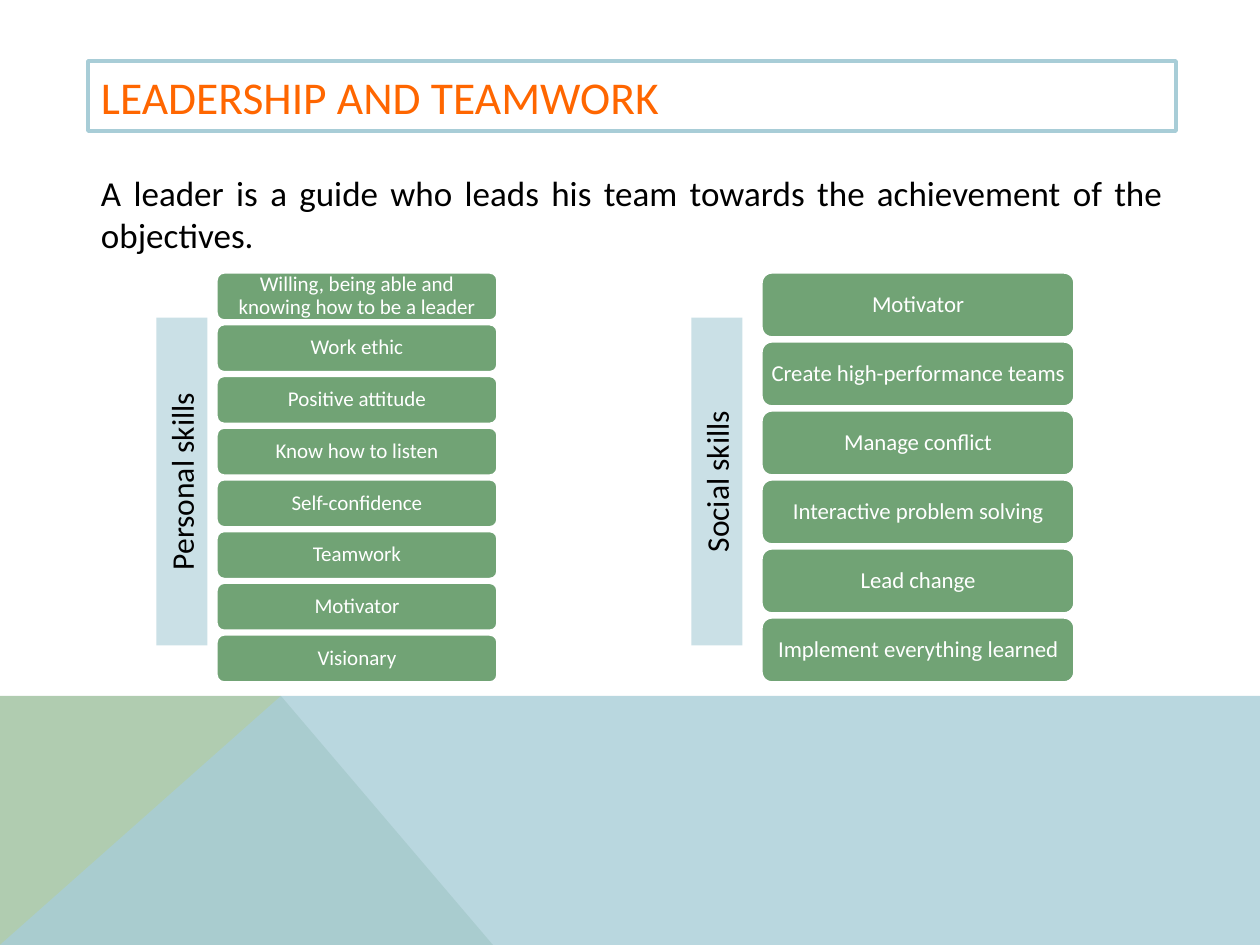
from dataclasses import dataclass

from lxml import etree
from pptx import Presentation
from pptx import util as u
from pptx.dml.color import RGBColor
from pptx.enum import shapes, text
from pptx.oxml.ns import qn

SCALE = 914400 / 126  # EMU in one px


@dataclass(frozen=True)
class Theme:
    font: str = "Calibri"
    white: str = "FFFFFF"
    black: str = "000000"
    orange: str = "FF6600"
    green: str = "71A375"
    pale_green: str = "B0CCB0"
    blue: str = "A8CDD7"
    pale_blue: str = "CAE0E6"
    title_size: int = 26
    intro_size: int = 20
    label_size: int = 18
    personal_size: int = 12
    social_size: int = 13
    line_width: int = 2


THEME = Theme()
PERSONAL_SKILLS = [
    "Willing, being able and knowing how to be a leader", "Work ethic",
    "Positive attitude", "Know how to listen", "Self-confidence",
    "Teamwork", "Motivator", "Visionary",
]
SOCIAL_SKILLS = [
    "Motivator", "Create high-performance teams", "Manage conflict",
    "Interactive problem solving", "Lead change", "Implement everything learned",
]
LIST_TOP, LIST_BOTTOM = 272, 683


def px(length):
    return u.Emu(round(length * SCALE))


def paint(shape, fill, line=None):
    shape.shadow.inherit = False
    shape.fill.solid()
    shape.fill.fore_color.rgb = RGBColor.from_string(fill)
    if line:
        shape.line.color.rgb = RGBColor.from_string(line)
        shape.line.width = u.Pt(THEME.line_width)
    else:
        shape.line.fill.background()


def write(shape, words, *, size, color, align=text.PP_ALIGN.LEFT,
          anchor=text.MSO_ANCHOR.TOP, inset=(13, 6), spacing=None):
    """Fill a shape with one paragraph; inset is (sides, top and bottom) in px."""
    frame = shape.text_frame
    frame.word_wrap = True
    frame.vertical_anchor = anchor
    frame.margin_left = frame.margin_right = px(inset[0])
    frame.margin_top = frame.margin_bottom = px(inset[1])
    para = frame.paragraphs[0]
    para.alignment = align
    if spacing:
        para.line_spacing = spacing
    span = para.add_run()
    span.text = words
    span.font.name = THEME.font
    span.font.size = u.Pt(size)
    span.font.color.rgb = RGBColor.from_string(color)


def add_box(page, kind, bounds, fill, line=None):
    box = page.shapes.add_shape(kind, *map(px, bounds))
    paint(box, fill, line)
    return box


def add_polygon(page, points, fill, opacity=None):
    builder = page.shapes.build_freeform(*points[0], scale=SCALE)
    builder.add_line_segments(points[1:], close=True)
    polygon = builder.convert_to_shape()
    paint(polygon, fill)
    if opacity:
        color = polygon.fill._xPr.find(".//" + qn("a:srgbClr"))
        etree.SubElement(color, qn("a:alpha"), val=str(opacity * 1000))


def add_skill_list(page, skills, left, width, height, size):
    """Spread the skills evenly between the list's top and bottom."""
    pitch = (LIST_BOTTOM - LIST_TOP - height) / (len(skills) - 1)
    for row, skill in enumerate(skills):
        bounds = (left, LIST_TOP + row * pitch, width, height)
        box = add_box(page, shapes.MSO_SHAPE.ROUNDED_RECTANGLE, bounds,
                      THEME.green, THEME.white)
        write(box, skill, size=size, color=THEME.white,
              align=text.PP_ALIGN.CENTER, anchor=text.MSO_ANCHOR.MIDDLE,
              inset=(6, 3), spacing=0.9)


def add_side_label(page, words, left):
    label = add_box(page, shapes.MSO_SHAPE.RECTANGLE, (left, 456, 328, 51),
                    THEME.pale_blue)
    label.rotation = 270
    write(label, words, size=THEME.label_size, color=THEME.black,
          align=text.PP_ALIGN.CENTER)


def main():
    deck = Presentation()
    deck.slide_width, deck.slide_height = px(1260), px(945)
    page = deck.slides.add_slide(deck.slide_layouts[6])

    add_polygon(page, [(0, 945), (0, 696), (281, 696), (493, 945)],
                THEME.pale_green)
    add_polygon(page, [(0, 945), (281, 696), (1260, 696), (1260, 945)],
                THEME.blue, opacity=80)

    title = add_box(page, shapes.MSO_SHAPE.RECTANGLE, (88, 61, 1088, 70),
                    THEME.white, THEME.blue)
    write(title, "LEADERSHIP AND TEAMWORK", size=THEME.title_size,
          color=THEME.orange, anchor=text.MSO_ANCHOR.MIDDLE)
    intro = page.shapes.add_textbox(*map(px, (88, 165, 1088, 97)))
    write(intro, "A leader is a guide who leads his team towards the "
          "achievement of the objectives.", size=THEME.intro_size,
          color=THEME.black, align=text.PP_ALIGN.JUSTIFY)

    add_skill_list(page, PERSONAL_SKILLS, 216, 282, 49, THEME.personal_size)
    add_skill_list(page, SOCIAL_SKILLS, 761, 314, 66, THEME.social_size)
    add_side_label(page, "Social skills", 553)
    add_side_label(page, "Personal skills", 18)

    deck.save("out.pptx")


if __name__ == "__main__":
    main()
